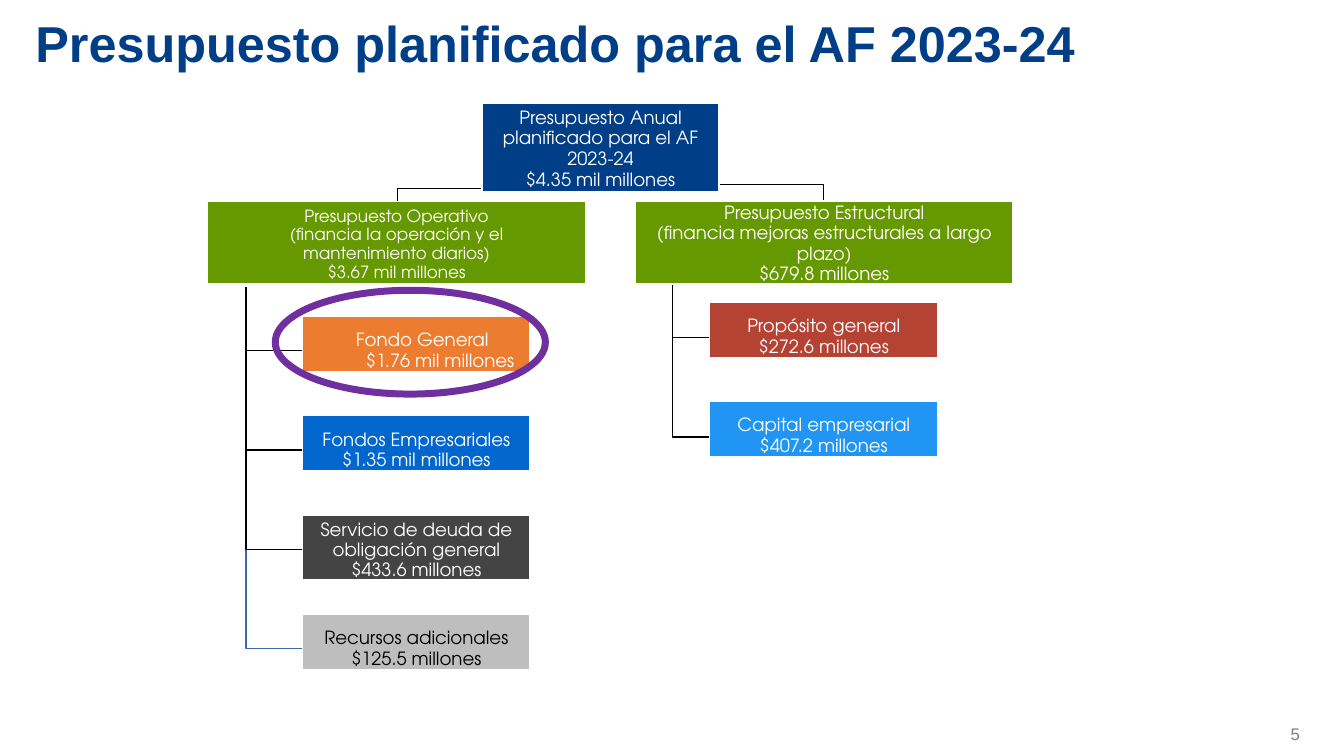
from dataclasses import dataclass
from itertools import zip_longest
from pptx import Presentation
from pptx.dml.color import RGBColor
from pptx.enum.shapes import MSO_SHAPE
from pptx.enum.text import MSO_ANCHOR, PP_ALIGN
from pptx.util import Inches, Pt


@dataclass(frozen=True)
class Theme:
    head: str = "Arial"
    body: str = "TeX Gyre Adventor"
    navy: str = "003E87"
    green: str = "669900"
    orange: str = "EC7C30"
    blue: str = "0166CE"
    dark: str = "444444"
    silver: str = "BEBEBE"
    red: str = "B54334"
    sky: str = "2095F3"
    purple: str = "6F2F9F"
    steel: str = "3C67B0"
    gray: str = "7E7E7E"
    white: str = "FFFFFF"
    black: str = "000000"
    title: float = 36
    large: float = 13
    small: float = 12
    thin: float = 1
    thick: float = 5


def write(frame, text, font, size, color, bold=False, align=PP_ALIGN.CENTER,
          lead=None, top=0, left=(), right=()):
    frame.word_wrap = True
    frame.vertical_anchor = MSO_ANCHOR.TOP
    frame.margin_left = frame.margin_right = frame.margin_bottom = 0
    frame.margin_top = top
    lines = text.split("\n")
    for order, (line, start, end) in enumerate(zip_longest(lines, left, right, fillvalue=0)):
        para = frame.paragraphs[0] if order == 0 else frame.add_paragraph()
        props = para._p.get_or_add_pPr()
        props.set("marL", str(int(start)))
        props.set("marR", str(int(end)))
        props.set("indent", "0")
        para.alignment = align
        if lead:
            para.line_spacing = Pt(lead)
        run = para.add_run()
        run.text = line
        run.font.name = font
        run.font.size = Pt(size)
        run.font.bold = bold
        run.font.color.rgb = RGBColor.from_string(color)


class Chart:
    def __init__(self, deck, theme):
        self.theme = theme
        self.wide, self.high = deck.slide_width, deck.slide_height
        self.shapes = deck.slides.add_slide(deck.slide_layouts[6]).shapes

    def across(self, share):
        return round(self.wide * share / 100)

    def down(self, share):
        return round(self.high * share / 100)

    def area(self, x, y, w, h):
        return self.across(x), self.down(y), self.across(w), self.down(h)

    def style(self, shape, fill, line, width):
        shape.shadow.inherit = False
        if fill:
            shape.fill.solid()
            shape.fill.fore_color.rgb = RGBColor.from_string(fill)
        else:
            shape.fill.background()
        shape.line.color.rgb = RGBColor.from_string(line)
        shape.line.width = Pt(width)

    def label(self, area, text, **form):
        write(self.shapes.add_textbox(*self.area(*area)).text_frame, text, **form)

    def box(self, area, text, fill, color=None, size=None, lead=14.9, top=1.73,
            left=(), right=(), align=PP_ALIGN.CENTER):
        theme = self.theme
        shape = self.shapes.add_shape(MSO_SHAPE.RECTANGLE, *self.area(*area))
        self.style(shape, fill, theme.white, theme.thin)
        write(shape.text_frame, text, theme.body, size or theme.large,
              color or theme.white, lead=lead, top=self.down(top), align=align,
              left=[self.across(m) for m in left], right=[self.across(m) for m in right])

    def branch(self, points, color=None):
        spots = [(self.across(x), self.down(y)) for x, y in points]
        pen = self.shapes.build_freeform(*spots[0])
        pen.add_line_segments(spots[1:], close=False)
        self.style(pen.convert_to_shape(), None, color or self.theme.black, self.theme.thin)

    def ring(self, area):
        shape = self.shapes.add_shape(MSO_SHAPE.OVAL, *self.area(*area))
        self.style(shape, None, self.theme.purple, self.theme.thick)


def main():
    deck = Presentation()
    deck.slide_width, deck.slide_height = Inches(13.33), Inches(7.5)
    theme = Theme()
    chart = Chart(deck, theme)
    step, leaf, tall = 13.13, 16.95, 7.33
    fund, plan = 22.5, 52.81

    chart.label((2.63, 1.47, 84.32, 8.27), "Presupuesto planificado para el AF 2023-24",
                font=theme.head, size=theme.title, color=theme.navy, bold=True,
                align=PP_ALIGN.LEFT, top=chart.down(0.13))

    for end, bend, stop in ((61.29, 24.4, 26.4), (29.56, 24.93, 26.93)):
        chart.branch([(44.71, 22.93), (44.71, bend), (end, bend), (end, stop)])
    for trunk, start, first, count, end in ((50.04, 35.6, 44.67, 2, plan),
                                            (18.3, 38, 46.4, 4, fund)):
        for row in reversed(range(count)):
            level = first + row * step
            chart.branch([(trunk, start), (trunk, level), (end, level)],
                         theme.steel if row == 3 else theme.black)

    chart.box((35.86, 13.73, 17.63, 11.6),
              "Presupuesto Anual planificado para el AF 2023-24\n$4.35 mil millones",
              theme.navy, top=0.4)
    chart.box((15.45, 26.67, 28.13, 10.8),
              "Presupuesto Operativo\n(financia la operación y el mantenimiento diarios)\n"
              "$3.67 mil millones",
              theme.green, size=theme.small, lead=13.4, top=0.67,
              left=(0, 4.05), right=(0, 4.05))
    chart.box((47.26, 26.67, 28.13, 10.93),
              "Presupuesto Estructural\n(financia mejoras estructurales a largo plazo)\n"
              "$679.8 millones",
              theme.green, lead=14.6, top=0.13)

    funds = (
        ("Fondo General\n$1.76 mil millones", theme.orange, tall,
         dict(left=(3.98, 4.73), align=PP_ALIGN.LEFT)),
        ("Fondos Empresariales\n$1.35 mil millones", theme.blue, tall, {}),
        ("Servicio de deuda de obligación general $433.6 millones", theme.dark, 8.53,
         dict(lead=14.3, top=0.67, left=(0.9,), right=(0.9,))),
        ("Recursos adicionales\n$125.5 millones", theme.silver, tall,
         dict(color=theme.black)),
    )
    plans = (
        ("Propósito general\n$272.6 millones", theme.red, tall, {}),
        ("Capital empresarial $407.2 millones", theme.sky, tall,
         dict(left=(1.5,), right=(1.5,))),
    )
    for x, y, group in ((fund, 41.87, funds), (plan, 40, plans)):
        for row, (text, fill, high, form) in enumerate(group):
            chart.box((x, y + row * step, leaf, high), text, fill, **form)

    chart.ring((20.48, 38.4, 20.1, 13.73))
    chart.label((95.72, 95.73, 2.1, 2.93), "5", font=theme.head, size=theme.small,
                color=theme.gray, align=PP_ALIGN.LEFT, lead=14.2,
                left=(chart.across(0.3),))
    deck.save("out.pptx")


if __name__ == "__main__":
    main()
